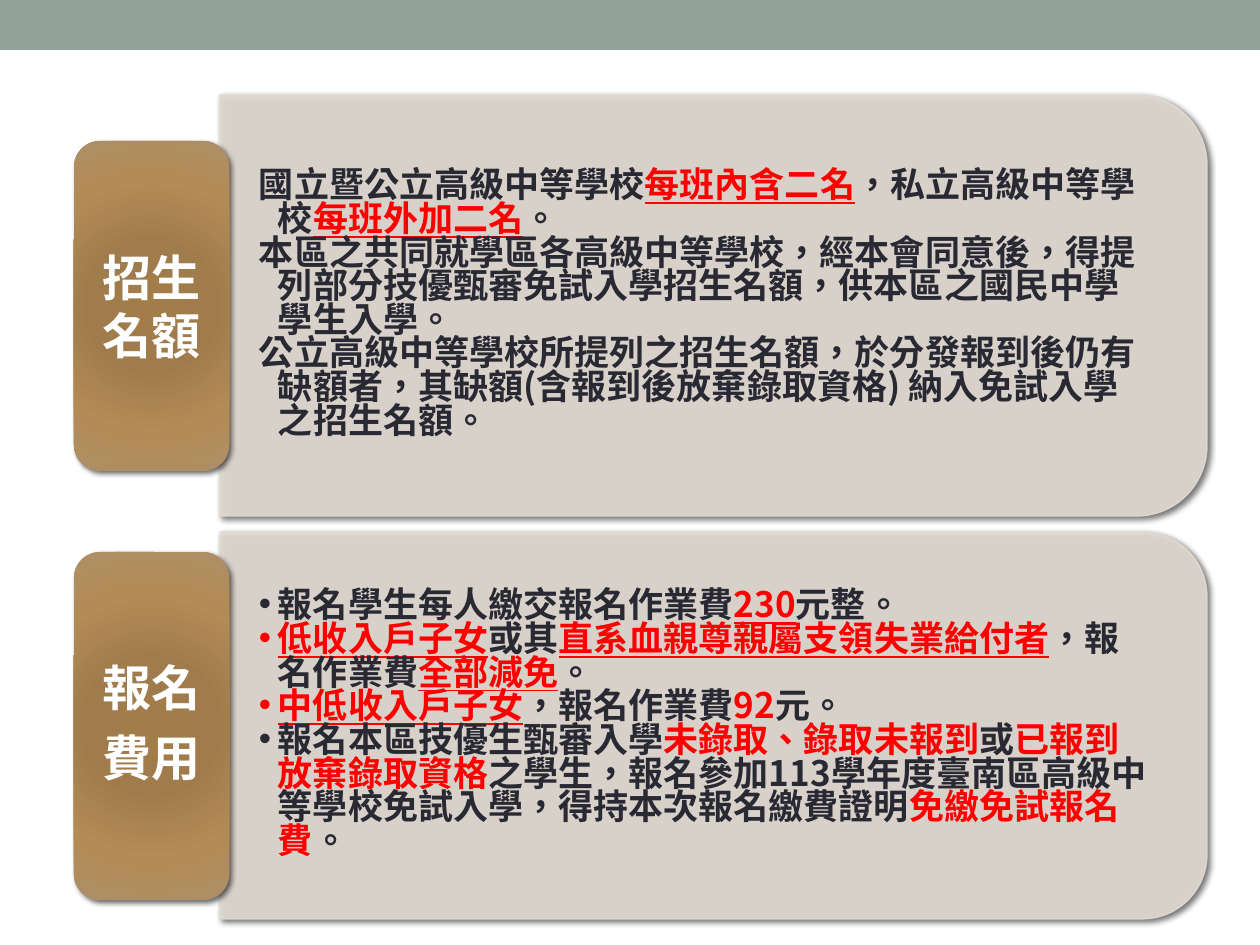
from lxml.etree import SubElement
from pptx import Presentation
from pptx.dml.color import RGBColor
from pptx.enum.shapes import MSO_SHAPE
from pptx.enum.text import MSO_ANCHOR, PP_ALIGN
from pptx.oxml.ns import qn
from pptx.util import Emu, Pt

PX = 914400 / 126
FONT = "Noto Sans CJK SC"
SAGE, SAND, DARK, RED, WHITE = "93A299", "E3DBD3", "292934", "FF0000", "FFFFFF"
GRADIENT = ((0, "A37D49"), (34, "A07C4C"), (70, "B38B55"), (100, "AD8F67"))
PLAIN, HOT, KEY = (None, None), (RED, None), (RED, True)

QUOTA = [
    [("國立暨公立高級中等學校", PLAIN), ("每班內含二名", KEY),
     ("，私立高級中等學校", PLAIN), ("每班外加二名", KEY), ("。", PLAIN)],
    [("本區之共同就學區各高級中等學校，經本會同意後，得提列部分技優甄審免試入學招生名額，"
      "供本區之國民中學學生入學。", PLAIN)],
    [("公立高級中等學校所提列之招生名額，於分發報到後仍有缺額者，其缺額(含報到後放棄錄取資格) "
      "納入免試入學之招生名額。", PLAIN)],
]
FEES = [
    [("報名學生每人繳交報名作業費", PLAIN), ("230", KEY), ("元整。", PLAIN)],
    [("低收入戶子女", KEY), ("或其", PLAIN), ("直系血親尊親屬支領失業給付者", KEY),
     ("，報名作業費", PLAIN), ("全部減免", KEY), ("。", PLAIN)],
    [("中低收入戶子女", KEY), ("，報名作業費", PLAIN), ("92", HOT), ("元。", PLAIN)],
    [("報名本區技優生甄審入學", PLAIN), ("未錄取、錄取未報到", HOT), ("或", PLAIN),
     ("已報到放棄錄取資格", HOT),
     ("之學生，報名參加113學年度臺南區高級中等學校免試入學，得持本次報名繳費證明", PLAIN),
     ("免繳免試報名費", HOT), ("。", PLAIN)],
]


def px(length):
    """Turn whole pixels into EMU."""
    return Emu(round(length * PX))


def color(value):
    """Turn a hex string into a colour."""
    return RGBColor.from_string(value)


def add_child(parent, tag, **attributes):
    """Append a drawing element with the given attributes."""
    return SubElement(parent, qn(f"a:{tag}"), {key: str(value) for key, value in attributes.items()})


def add_block(page, kind, left, top, width, height):
    """Add a preset shape with no line and no shadow."""
    shape = page.shapes.add_shape(kind, px(left), px(top), px(width), px(height))
    shape.shadow.inherit = False
    shape.line.fill.background()
    return shape


def add_shadow(shape):
    """Give the shape a soft shadow to the lower right."""
    effects = shape._element.spPr.find(qn("a:effectLst"))
    shadow = add_child(effects, "outerShdw", blurRad=Pt(3), dist=Pt(2), dir=45 * 60000, rotWithShape=0)
    add_child(add_child(shadow, "srgbClr", val="000000"), "alpha", val=60000)


def fill_gradient(shape):
    """Fill the shape with the bronze radial gradient."""
    properties = shape._element.spPr
    gradient = add_child(properties, "gradFill", rotWithShape=1)
    stops = add_child(gradient, "gsLst")
    for position, value in GRADIENT:
        add_child(add_child(stops, "gs", pos=position * 1000), "srgbClr", val=value)
    sides = dict.fromkeys("ltrb", 100000)
    add_child(add_child(gradient, "path", path="circle"), "fillToRect", **sides)
    properties.find(qn("a:prstGeom")).addnext(gradient)


def set_font(para, size, value):
    """Set the bold font of a whole paragraph."""
    font = para.font
    font.size, font.bold, font.name = Pt(size), True, FONT
    font.color.rgb = color(value)
    add_child(para._p.pPr.find(qn("a:defRPr")), "ea", typeface=FONT)


def add_span(para, text):
    """Add a run of Traditional Chinese text."""
    span = para.add_run()
    span.text = text
    span._r.get_or_add_rPr().set("lang", "zh-TW")
    return span


def set_frame(frame, horizontal, vertical):
    """Wrap and centre a text frame vertically with the given insets."""
    frame.word_wrap = True
    frame.vertical_anchor = MSO_ANCHOR.MIDDLE
    frame.margin_left = frame.margin_right = px(horizontal)
    frame.margin_top = frame.margin_bottom = px(vertical)


def paragraphs(frame, count):
    """Return the frame's paragraphs, extended to the count."""
    return [frame.paragraphs[0]] + [frame.add_paragraph() for _ in range(count - 1)]


def add_panel(page, left, top, width, height):
    """Add a sand panel whose right corners are round."""
    shift = (width - height) // 2
    panel = add_block(page, MSO_SHAPE.ROUND_2_SAME_RECTANGLE, left + shift, top - shift, height, width)
    panel.rotation = 90
    panel.fill.solid()
    panel.fill.fore_color.rgb = color(SAND)
    panel.line.color.rgb = color(SAND)
    panel.line.width = Pt(0.75)
    for tint in panel._element.spPr.iter(qn("a:srgbClr")):
        add_child(tint, "alpha", val=90000)
    add_shadow(panel)


def add_body(page, left, top, width, height, content, bullet):
    """Add the hanging paragraphs of a panel."""
    box = page.shapes.add_textbox(px(left), px(top), px(width), px(height))
    set_frame(box.text_frame, 34, 18)
    for para, spans in zip(paragraphs(box.text_frame, len(content)), content):
        para.level = 1
        para.line_spacing = 0.8
        properties = para._p.get_or_add_pPr()
        properties.set("marL", str(px(24)))
        properties.set("indent", str(px(-19)))
        if bullet:
            add_child(properties, "buFont", typeface="Arial")
            add_child(properties, "buChar", char=bullet)
        set_font(para, 20, DARK)
        for text, (value, underline) in spans:
            span = add_span(para, text)
            if value:
                span.font.color.rgb = color(value)
            if underline:
                span.font.underline = True


def add_label(page, left, top, width, height, lines, spacing, after):
    """Add a bronze label with one paragraph per line."""
    label = add_block(page, MSO_SHAPE.ROUNDED_RECTANGLE, left, top, width, height)
    fill_gradient(label)
    add_shadow(label)
    set_frame(label.text_frame, 12, 8)
    for para, line in zip(paragraphs(label.text_frame, len(lines)), lines):
        para.alignment = PP_ALIGN.CENTER
        para.line_spacing = spacing
        para.space_after = Pt(after)
        set_font(para, 28, WHITE)
        add_span(para, line)


def main():
    """Build the slide and save it."""
    deck = Presentation()
    deck.slide_width, deck.slide_height = px(1260), px(945)
    page = deck.slides.add_slide(deck.slide_layouts[6])
    band = add_block(page, MSO_SHAPE.RECTANGLE, 0, 0, 1260, 50)
    band.fill.solid()
    band.fill.fore_color.rgb = color(SAGE)
    add_panel(page, 220, 95, 987, 421)
    add_body(page, 220, 116, 966, 379, QUOTA, None)
    add_label(page, 74, 141, 155, 330, ("招生", "名額"), 1.0, 0)
    add_panel(page, 220, 532, 987, 387)
    add_body(page, 220, 551, 968, 349, FEES, "•")
    add_label(page, 74, 552, 155, 348, ("報名", "費用"), 0.9, 9.8)
    deck.save("out.pptx")


if __name__ == "__main__":
    main()
